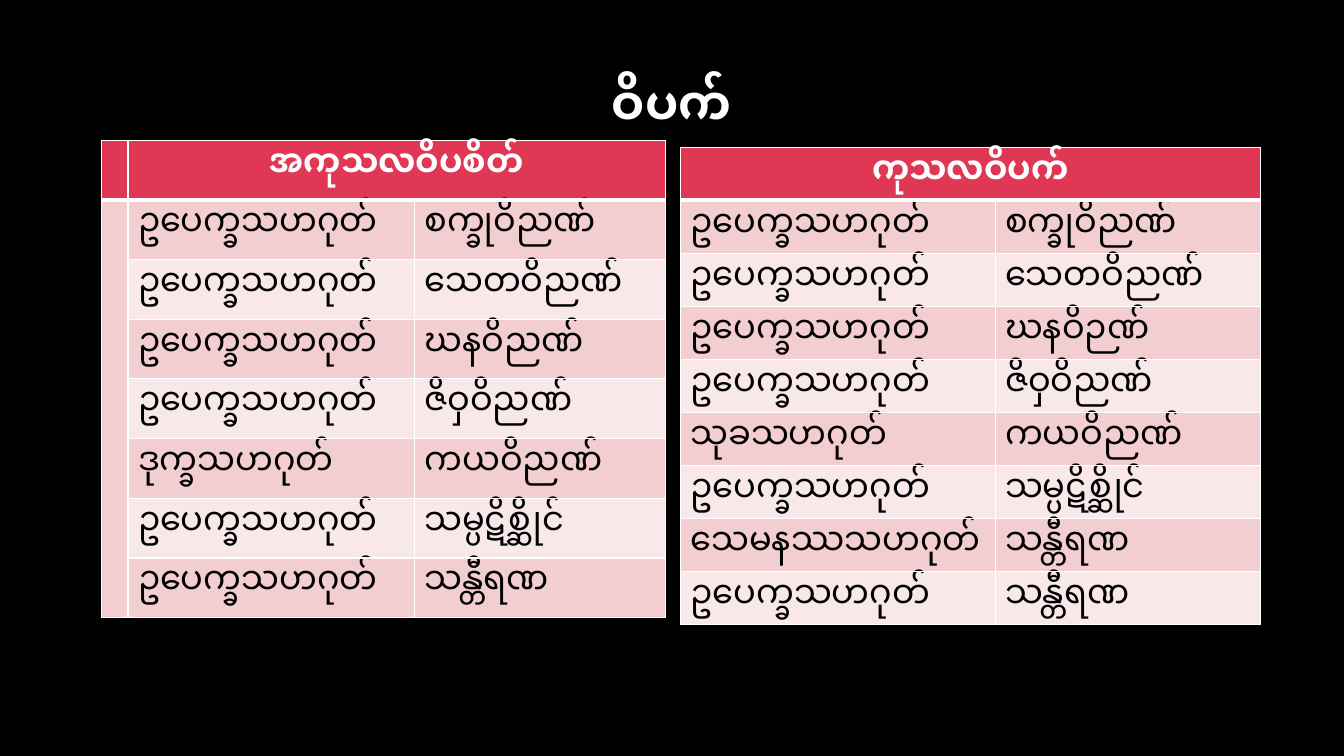
from lxml.etree import SubElement
from pptx import Presentation
from pptx.dml.color import RGBColor
from pptx.enum.text import MSO_ANCHOR, PP_ALIGN
from pptx.oxml.ns import qn
from pptx.util import Inches, Pt

COLORS = {
    "background": "000000",
    "header": "E03754",
    "odd": "F3CED1",
    "even": "F9E8E9",
    "light": "FFFFFF",
    "dark": "000000",
}
FONT = "Arial"
UNIT = Inches(0.1)  # grid step for all lengths
TABLE_HEIGHT = 47.4

NEUTRAL = "ဥပေက္ခာသဟဂုတ်"
UNWHOLESOME = [
    (NEUTRAL, "စက္ခုဝိညာဏ်"),
    (NEUTRAL, "သောတဝိညာဏ်"),
    (NEUTRAL, "ဃာနဝိညာဏ်"),
    (NEUTRAL, "ဇိဝှါဝိညာဏ်"),
    ("ဒုက္ခသဟဂုတ်", "ကာယဝိညာဏ်"),
    (NEUTRAL, "သမ္ပဋိစ္ဆိုင်း"),
    (NEUTRAL, "သန္တီရဏ"),
]
WHOLESOME = [
    (NEUTRAL, "စက္ခုဝိညာဏ်"),
    (NEUTRAL, "သောတဝိညာဏ်"),
    (NEUTRAL, "ဃာနဝိဉာဏ်"),
    (NEUTRAL, "ဇိဝှါဝိညာဏ်"),
    ("သုခသဟဂုတ်", "ကာယဝိညာဏ်"),
    (NEUTRAL, "သမ္ပဋိစ္ဆိုင်း"),
    ("သောမနဿသဟဂုတ်", "သန္တီရဏ"),
    (NEUTRAL, "သန္တီရဏ"),
]
# left, top, column widths, heading, rows
TABLES = [
    (10.1, 13.9, (2.6, 28.4, 24.9), "အကုသလဝိပါစိတ်", UNWHOLESOME),
    (67.5, 14.6, (31.2, 26.3), "ကုသလဝိပါက်", WHOLESOME),
]


def write(paragraph, text, size, color, bold):
    paragraph.text = text
    paragraph.font.name = FONT
    paragraph.font.size = Pt(size)
    paragraph.font.bold = bold
    paragraph.font.color.rgb = RGBColor.from_string(COLORS[color])


def style_cell(cell, fill, top, bottom):
    """Draw the four borders (widths in points), then the fill."""
    properties = cell._tc.get_or_add_tcPr()
    for side, width in (("L", 1), ("R", 1), ("T", top), ("B", bottom)):
        line = SubElement(properties, qn(f"a:ln{side}"), w=str(Pt(width)))
        solid = SubElement(line, qn("a:solidFill"))
        SubElement(solid, qn("a:srgbClr"), val=COLORS["light"])
    cell.fill.solid()
    cell.fill.fore_color.rgb = RGBColor.from_string(COLORS[fill])


presentation = Presentation()
presentation.slide_width = Inches(13.33)
presentation.slide_height = Inches(7.5)
slide = presentation.slides.add_slide(presentation.slide_layouts[6])
slide.background.fill.solid()
slide.background.fill.fore_color.rgb = RGBColor.from_string(COLORS["background"])

title = slide.shapes.add_textbox(
    *(int(length * UNIT) for length in (10, 6.5, 113.2, 7.7))
)
title.text_frame.word_wrap = True
title.text_frame.vertical_anchor = MSO_ANCHOR.MIDDLE
heading_line = title.text_frame.paragraphs[0]
write(heading_line, "ဝိပါက်", 34, "light", True)
heading_line.alignment = PP_ALIGN.CENTER
heading_line.line_spacing = 0.9

for left, top, widths, heading, rows in TABLES:
    frame = slide.shapes.add_table(
        len(rows) + 1, len(widths),
        *(int(length * UNIT) for length in (left, top, sum(widths), TABLE_HEIGHT)),
    )
    table = frame.table
    table.horz_banding = False
    for column, width in zip(table.columns, widths):
        column.width = int(width * UNIT)

    for row_index, row in enumerate(table.rows):
        band = "odd" if row_index % 2 else "even"
        for cell in row.cells:
            style_cell(
                cell,
                "header" if row_index == 0 else band,
                top=3 if row_index == 1 else 1,
                bottom=3 if row_index == 0 else 1,
            )

    first_text = len(widths) - 2
    header = table.cell(0, first_text)
    header.merge(table.cell(0, first_text + 1))
    write(header.text_frame.paragraphs[0], heading, 24, "light", True)
    header.text_frame.paragraphs[0].alignment = PP_ALIGN.CENTER
    if first_text:
        table.cell(1, 0).merge(table.cell(len(rows), 0))

    for row_index, texts in enumerate(rows, start=1):
        for column_index, text in enumerate(texts, start=first_text):
            paragraph = table.cell(row_index, column_index).text_frame.paragraphs[0]
            write(paragraph, text, 24, "dark", False)

presentation.save("out.pptx")
